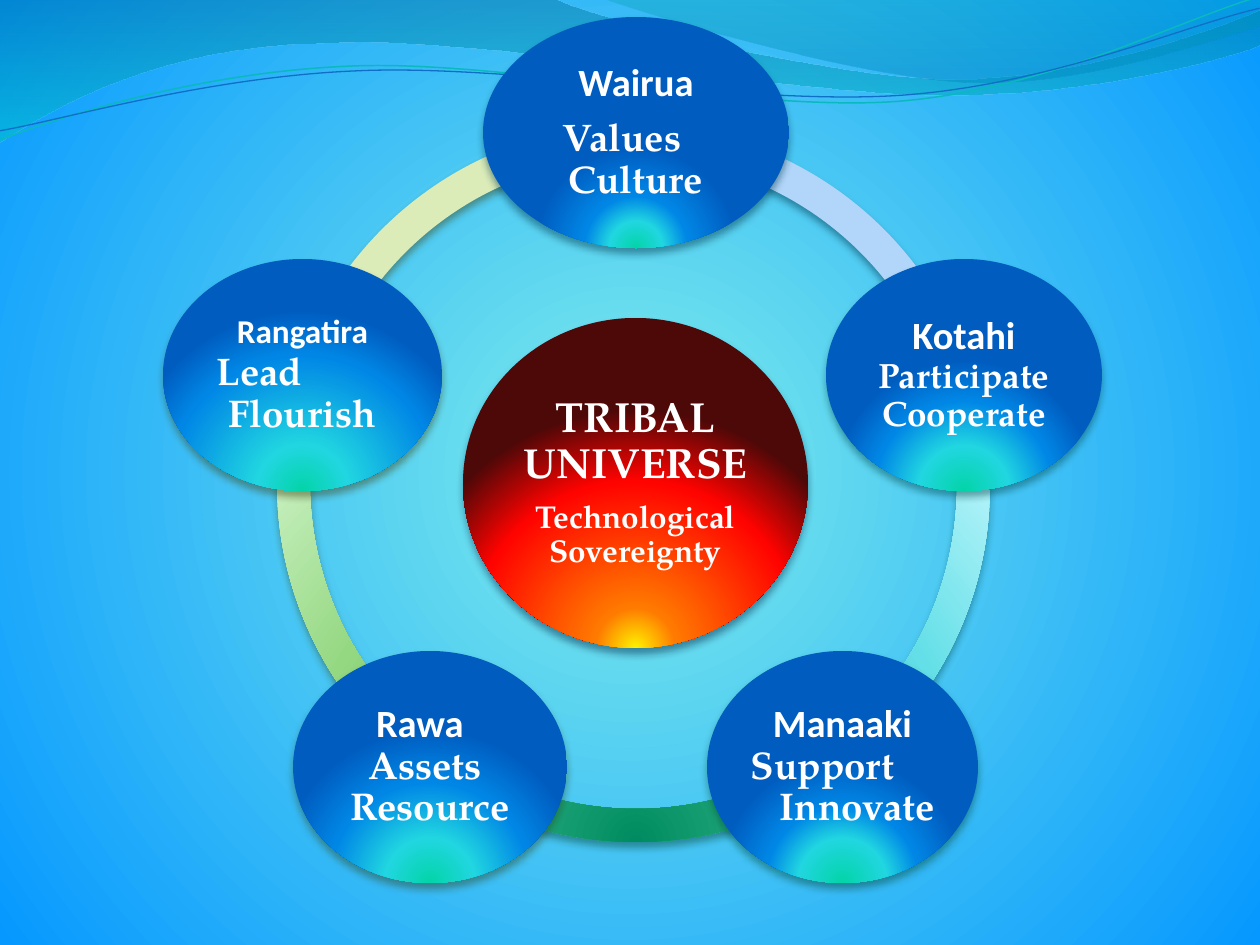
import lxml.etree
import pptx
import pptx.dml.color
import pptx.enum.shapes
import pptx.enum.text
import pptx.oxml.ns
import pptx.util

PX = 914400 / 126
qn = pptx.oxml.ns.qn
RGB = pptx.dml.color.RGBColor.from_string
SHAPE = pptx.enum.shapes.MSO_SHAPE
ALIGN = pptx.enum.text.PP_ALIGN
HEAD, BODY = "Calibri", "TeX Gyre Pagella"

C = {
    "white": "FFFFFF", "sky": "0698FF", "aqua": "75E6EC",
    "teal line": "0AB8BF", "blue line": "0F6FC6",
    "mint": "03D4A8", "cyan": "21D6E0", "azure": "0087E6", "blue": "005CBF",
    "yellow": "FFF200", "orange": "FF7A00", "red": "FF0300", "maroon": "4D0808",
    "olive shade": "3A4519", "leaf shade": "2B4821", "green shade": "044A37",
    "teal shade": "024B4E", "blue shade": "00374C", "core shade": "042747",
}


def gradient(fill, root, stops, focus=None):
    """Fill with (position, colour, alpha) stops: radial from focus, else downwards."""
    fill.gradient()
    g = root.find(".//" + qn("a:gradFill"))
    g.clear()
    gs_list = lxml.etree.SubElement(g, qn("a:gsLst"))
    for pos, color, alpha in stops:
        gs = lxml.etree.SubElement(gs_list, qn("a:gs"), pos=str(pos * 1000))
        clr = lxml.etree.SubElement(gs, qn("a:srgbClr"), val=color)
        if alpha < 100:
            lxml.etree.SubElement(clr, qn("a:alpha"), val=str(alpha * 1000))
    if focus:
        path = lxml.etree.SubElement(g, qn("a:path"), path="circle")
        sides = {k: str(v * 1000) for k, v in zip("ltrb", focus)}
        lxml.etree.SubElement(path, qn("a:fillToRect"), **sides)
    else:
        lxml.etree.SubElement(g, qn("a:lin"), ang="5400000", scaled="1")


def wave(start, segments, close):
    """Outline from straight segments (one point) and cubic curves (three points)."""
    fb = s.shapes.build_freeform(*start, scale=PX)
    fb.add_line_segments([pt for seg in segments for pt in seg], close=close)
    sp = fb.convert_to_shape()
    sp.shadow.inherit = False
    steps = iter(sp._element.findall(".//" + qn("a:lnTo")))
    for seg in segments:
        first = next(steps)
        if len(seg) == 3:
            first.tag = qn("a:cubicBezTo")
            for _ in range(2):
                step = next(steps)
                first.append(step[0])
                step.getparent().remove(step)
    return sp


prs = pptx.Presentation()
prs.slide_width, prs.slide_height = round(1260 * PX), round(945 * PX)
s = prs.slides.add_slide(prs.slide_layouts[6])

# Background
gradient(s.background.fill, s._element,
         [(0, C["aqua"], 100), (9, C["aqua"], 100), (100, C["sky"], 100)],
         (50, 50, 50, 50))

# Waves along the top
bands = [
    ((-1, 0), [[(554, -1)], [(600, 21), (837, 79), (955, 79)],
               [(1075, 79), (1207, 33), (1260, 11)], [(1261, 45)],
               [(1239, 55), (1096, 96), (940, 95)], [(784, 94), (481, 35), (324, 43)],
               [(163, 45), (58, 105), (-1, 142)]],
     [(0, "0074A1", 45), (100, "00C6CF", 55)]),
    ((604, -1), [[(642, 14), (859, 78), (969, 82)],
                 [(1079, 87), (1211, 40), (1260, 26)], [(1260, 0)]],
     [(0, "00A1A9", 30), (80, "008BBF", 45)]),
]
for start, segments, stops in bands:
    sp = wave(start, segments, True)
    gradient(sp.fill, sp._element, stops)
    sp.line.fill.background()

threads = [
    ((-2, 110), [[(58, 90), (199, 52), (350, 53)], [(499, 53), (745, 118), (896, 114)],
                 [(1049, 109), (1184, 45), (1260, 27)]], "teal line", 0.85),
    ((-2, 101), [[(57, 94), (207, 57), (357, 58)], [(509, 58), (750, 112), (902, 108)],
                 [(1052, 104), (1184, 52), (1262, 38)]], "blue line", 0.75),
]
for start, segments, color, width in threads:
    sp = wave(start, segments, False)
    sp.rotation = 357.3
    sp.fill.background()
    sp.line.color.rgb = RGB(C[color])
    sp.line.width = pptx.util.Pt(width)

# Ring: left, top, start, end, gradient colours, shadow
arcs = [
    (277, 124, 118.8, 162, ("729800", "B8D275", "DBECB9"), "olive shade"),
    (277, 124, 75.6, 118.8, ("319811", "95D882", "C6EFBD"), "leaf shade"),
    (277, 124, 32.4, 75.6, ("008C60", "65DEB0", "B2F4D6"), "green shade"),
    (272, 127, 204.86, 31.85, ("008A91", "64DFE7", "B1F3F9"), "teal shade"),
    (271, 124, 162.55, 205.2, ("006091", "64B1E7", "B1D6F9"), "blue shade"),
]
shaded = []
for x, y, begin, end, colors, shade in arcs:
    sp = s.shapes.add_shape(SHAPE.BLOCK_ARC, *(round(v * PX) for v in (x, y, 718, 718)))
    for i, value in enumerate((begin, end, 0.046)):
        sp.adjustments[i] = value
    gradient(sp.fill, sp._element,
             [(pos, c, 100) for pos, c in zip((0, 68, 100), colors)], (50, 130, 50, -30))
    shaded.append((sp, shade))

# Ovals: box, colours, stops, shadow, lines of (text, font, size, alignment, indent, space after)
core = ("yellow", "orange", "red", "maroon")
outer = ("mint", "cyan", "azure", "blue")
MID, LEFT, RIGHT = ALIGN.CENTER, ALIGN.LEFT, ALIGN.RIGHT
ovals = [
    ((463, 318, 345, 330), core, (0, 17, 70, 100), "core shade",
     [("TRIBAL UNIVERSE", BODY, 24, MID, 0, 8),
      ("Technological Sovereignty", BODY, 18, MID, 0, 0)]),
    ((483, 17, 306, 231), outer, (0, 14, 27, 53), "blue shade",
     [("Wairua", HEAD, 22, MID, 0, 8), ("Values", BODY, 22, LEFT, 31, 0),
      ("Culture", BODY, 22, MID, 0, 0)]),
    ((826, 259, 276, 232), outer, (0, 25, 50, 73), "teal shade",
     [("Kotahi", HEAD, 22, MID, 0, 0), ("Participate Cooperate", BODY, 20, MID, 0, 0)]),
    ((707, 651, 271, 232), outer, (0, 25, 43, 70), "green shade",
     [("Manaaki", HEAD, 22, MID, 0, 0), ("Support", BODY, 22, LEFT, 0, 0),
      ("Innovate", BODY, 22, RIGHT, 0, 0)]),
    ((293, 651, 274, 232), outer, (0, 25, 56, 86), "leaf shade",
     [("Rawa", HEAD, 22, LEFT, 39, 0), ("Assets", BODY, 22, LEFT, 31, 0),
      ("Resource", BODY, 22, MID, 0, 0)]),
    ((163, 259, 279, 232), outer, (0, 25, 75, 100), "olive shade",
     [("Rangatira", HEAD, 19, MID, 0, 1), ("Lead", BODY, 22, LEFT, 9, 0),
      ("Flourish", BODY, 22, MID, 0, 0)]),
]
for box, colors, positions, shade, lines in ovals:
    sp = s.shapes.add_shape(SHAPE.OVAL, *(round(v * PX) for v in box))
    gradient(sp.fill, sp._element,
             [(pos, C[c], 100) for pos, c in zip(positions, colors)], (50, 100, 50, 0))
    shaded.append((sp, shade))
    tf = sp.text_frame
    tf.word_wrap = True
    tf.vertical_anchor = pptx.enum.text.MSO_ANCHOR.MIDDLE
    tf.margin_left = tf.margin_right = tf.margin_top = tf.margin_bottom = round(4 * PX)
    for i, (text, font, size, align, indent, after) in enumerate(lines):
        p = tf.paragraphs[0] if i == 0 else tf.add_paragraph()
        p.text = text
        p.alignment = align
        if indent:
            p._p.get_or_add_pPr().set("marL", str(round(indent * PX)))
        p.line_spacing = 0.9
        p.space_after = pptx.util.Pt(after)
        r = p.runs[0]
        r.font.name, r.font.size, r.font.bold = font, pptx.util.Pt(size), True
        r.font.color.rgb = RGB(C["white"])

# Soft shadows below ring and ovals
for sp, shade in shaded:
    sp.line.fill.background()
    sp.shadow.inherit = False
    effects = sp._element.spPr.find(qn("a:effectLst"))
    shadow = lxml.etree.SubElement(effects, qn("a:outerShdw"), blurRad="57150",
                                   dist="38100", dir="5400000", rotWithShape="0")
    clr = lxml.etree.SubElement(shadow, qn("a:srgbClr"), val=C[shade])
    lxml.etree.SubElement(clr, qn("a:alpha"), val="48000")

prs.save("out.pptx")
